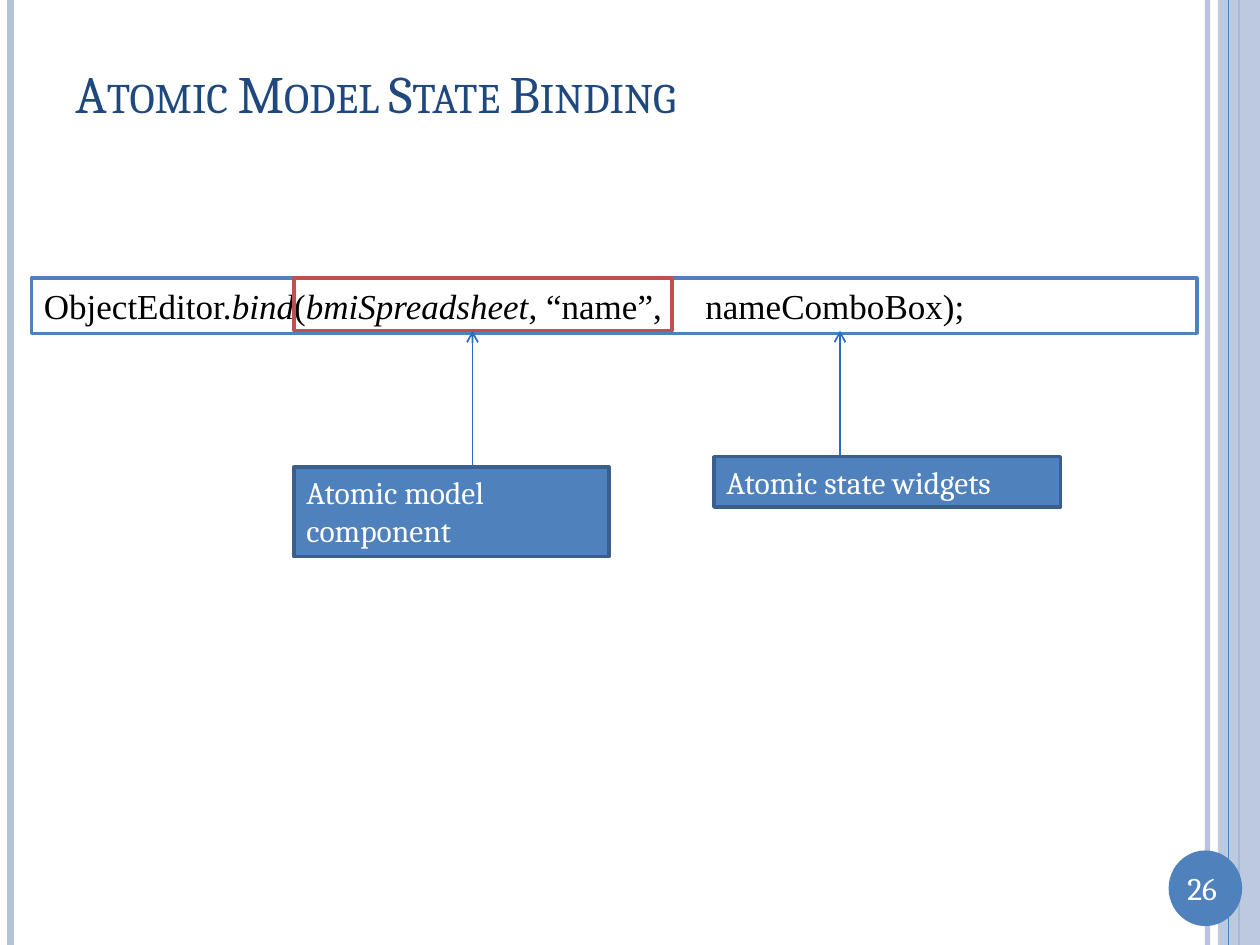
import pptx
import pptx.util
import pptx.dml.color
import pptx.enum.shapes
import pptx.enum.text
import pptx.oxml
import pptx.oxml.ns
from lxml import etree

SHAPE = pptx.enum.shapes.MSO_SHAPE
ALIGN = pptx.enum.text.PP_ALIGN
ANCHOR = pptx.enum.text.MSO_ANCHOR
qn = pptx.oxml.ns.qn

prs = pptx.Presentation()
prs.slide_width = pptx.util.Inches(10)
prs.slide_height = pptx.util.Inches(7.5)
col = prs.slide_width / 120
row = prs.slide_height / 90
s = prs.slides.add_slide(prs.slide_layouts[6])


def paint(color_format, value, alpha=100):
    color_format.rgb = pptx.dml.color.RGBColor.from_string(value)
    if alpha < 100:
        for clr in color_format._xFill.iter(qn("a:srgbClr")):
            etree.SubElement(clr, qn("a:alpha"), val=str(alpha * 1000))


def write(sp, runs, size, font, color, align=ALIGN.LEFT, anchor=ANCHOR.TOP, tab=None):
    tf = sp.text_frame
    tf.word_wrap = True
    tf.vertical_anchor = anchor
    p = tf.paragraphs[0]
    p.alignment = align
    if tab:
        tabs = etree.SubElement(p._p.get_or_add_pPr(), qn("a:tabLst"))
        etree.SubElement(tabs, qn("a:tab"), pos=str(int(tab * col)), algn="l")
    for text, italic in runs:
        r = p.add_run()
        r.text = text
        if italic:
            r.font.italic = True
    p.font.size = pptx.util.Pt(size)
    p.font.name = font
    paint(p.font.color, color)


lines = [
    (115, 0, 90, "B3C1DB", 3, 93, False),
    (1, 0, 90, "B3C1DB", 4.5, 100, False),
    (118, 0, 90, "4F81BD", 1.5, 100, False),
    (117, 0, 90, "4F81BD", 0.75, 100, False),
    (45, 44.5, 31.5, "2C6CB9", 1, 100, True),
    (80, 43.5, 31.5, "2C6CB9", 1, 100, True),
]
connectors = []
for x, y1, y2, color, width, alpha, arrow in lines:
    c = s.shapes.add_connector(
        pptx.enum.shapes.MSO_CONNECTOR.STRAIGHT,
        int(x * col), int(y1 * row), int(x * col), int(y2 * row))
    c.line.width = pptx.util.Pt(width)
    c.line.fill.solid()
    paint(c.line.fill.fore_color, color, alpha)
    if arrow:
        etree.SubElement(c.line._get_or_add_ln(), qn("a:tailEnd"), type="arrow")
    etree.SubElement(c._element.spPr, qn("a:effectLst"))
    connectors.append(c)

boxes = [
    ("band", SHAPE.RECTANGLE, 116, 0, 4, 90, "B3C1DB", 87, None),
    ("badge", SHAPE.OVAL, 111.3, 81, 7, 7.2, "4F81BD", 100, None),
    ("code", SHAPE.RECTANGLE, 3, 26.5, 111, 5.25, "FFFFFF", 100, "4F81BD"),
    ("model", SHAPE.RECTANGLE, 28, 44.5, 30, 8.5, "4F81BD", 100, "3A5F8C"),
    ("widgets", SHAPE.RECTANGLE, 68, 43.5, 33, 4.8, "4F81BD", 100, "3A5F8C"),
    ("highlight", SHAPE.RECTANGLE, 28, 26.5, 36, 5, None, 100, "C0504D"),
]
shapes = {}
for name, kind, x, y, w, h, fill, alpha, outline in boxes:
    sp = s.shapes.add_shape(kind, int(x * col), int(y * row), int(w * col), int(h * row))
    sp.shadow.inherit = False
    if fill:
        sp.fill.solid()
        paint(sp.fill.fore_color, fill, alpha)
    else:
        sp.fill.background()
    if outline:
        paint(sp.line.color, outline)
        sp.line.width = pptx.util.Pt(2)
    else:
        sp.line.fill.background()
    shapes[name] = sp

tree = s.shapes._spTree
tree.remove(shapes["band"]._element)
connectors[3]._element.addprevious(shapes["band"]._element)
for c in connectors[4:]:
    tree.append(c._element)

title = s.shapes.add_textbox(int(6 * col), int(3.6 * row), int(104 * col), int(10.4 * row))
write(title, [("Atomic Model State Binding", False)], 30, "Cambria", "1F497D", anchor=ANCHOR.MIDDLE)
for r in title.text_frame.paragraphs[0].runs:
    r._r.get_or_add_rPr().set("cap", "small")

number = s.shapes.add_textbox(int(111 * col), int(82.2 * row), int(7 * col), int(4.8 * row))
write(number, [("26", False)], 18, "Cambria", "FFFFFF", ALIGN.CENTER)

code = [
    ("ObjectEditor.", False),
    ("bind", True),
    ("(", False),
    ("bmiSpreadsheet", True),
    (", “name”,\tnameComboBox);", False),
]
write(shapes["code"], code, 20, "Times New Roman", "000000", tab=63)
write(shapes["model"], [("Atomic model component", False)], 18, "Cambria", "FFFFFF")
write(shapes["widgets"], [("Atomic state widgets", False)], 18, "Cambria", "FFFFFF")

prs.save("out.pptx")
